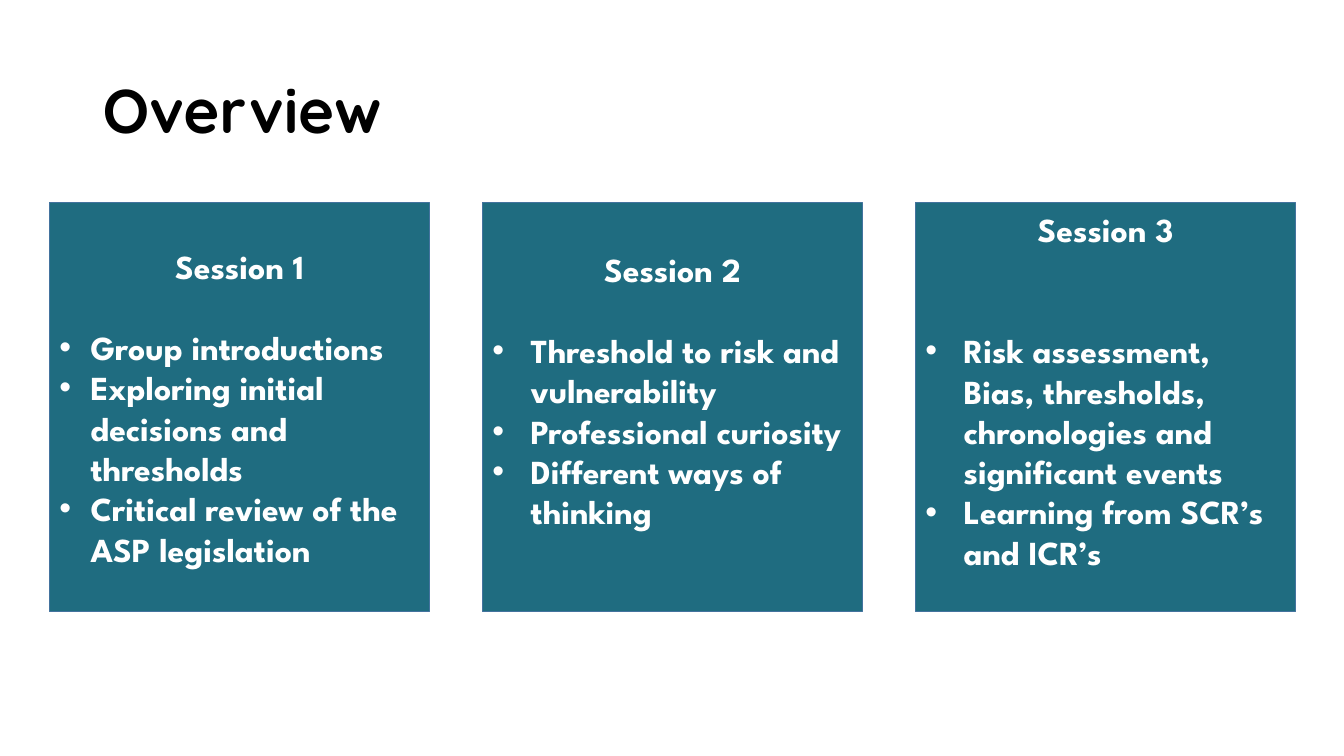
from pptx import Presentation
from pptx.dml.color import RGBColor
from pptx.enum.shapes import MSO_SHAPE as Shape
from pptx.enum.text import MSO_ANCHOR as Anchor, PP_ALIGN as Align
from pptx.util import Inches, Pt
from lxml.etree import SubElement

# Content: heading, top inset (in), lines between heading and list, indent (in), bullets
TITLE = "Overview"
SESSIONS = [
    ("Session 1", 0.43, 1, 0.31, [
        "Group introductions",
        "Exploring initial decisions and thresholds",
        "Critical review of the ASP legislation"]),
    ("Session 2", 0.46, 1, 0.38, [
        "Threshold to risk and vulnerability",
        "Professional curiosity",
        "Different ways of thinking"]),
    ("Session 3", 0.06, 2, 0.38, [
        "Risk assessment, Bias, thresholds, chronologies and significant events",
        "Learning from SCR’s and ICR’s"]),
]

# Grid and style
WIDTH, HEIGHT = 13.33, 7.5
CARD_LEFT, CARD_TOP, CARD_STEP = 0.49, 2.01, 4.295
CARD_WIDTH, CARD_HEIGHT = 3.77, 4.06
LINE_HEIGHT = 29
TEAL, EDGE, WHITE, BLACK = "1F6C80", "43739E", "FFFFFF", "000000"


def color(code):
    return RGBColor.from_string(code)


def write(para, text, font="League Spartan", size=24, ink=WHITE,
          align=Align.LEFT, after=0, spacing=None, indent=None):
    para.alignment = align
    para.space_after = Pt(after)
    if spacing:
        para.line_spacing = spacing
    if indent:
        props = para._p.get_or_add_pPr()
        props.set("marL", str(Inches(indent)))
        props.set("indent", str(-Inches(indent)))
        space = props.nsmap["a"]
        SubElement(props, f"{{{space}}}buFont", typeface="Arial")
        SubElement(props, f"{{{space}}}buChar", char="•")
    span = para.add_run()
    span.text = text
    span.font.name, span.font.size, span.font.bold = font, Pt(size), True
    span.font.color.rgb = color(ink)


deck = Presentation()
deck.slide_width, deck.slide_height = Inches(WIDTH), Inches(HEIGHT)
page = deck.slides.add_slide(deck.slide_layouts[6])

# Title
box = page.shapes.add_textbox(Inches(0.92), Inches(0.4), Inches(11.5), Inches(1.45))
box.text_frame.word_wrap = True
box.text_frame.vertical_anchor = Anchor.MIDDLE
write(box.text_frame.paragraphs[0], TITLE, font="Quicksand", size=44, ink=BLACK, spacing=0.9)

# Session cards
for column, (heading, inset, gap, indent, bullets) in enumerate(SESSIONS):
    card = page.shapes.add_shape(
        Shape.RECTANGLE, Inches(CARD_LEFT + column * CARD_STEP), Inches(CARD_TOP),
        Inches(CARD_WIDTH), Inches(CARD_HEIGHT))
    card.shadow.inherit = False
    card.fill.solid()
    card.fill.fore_color.rgb = color(TEAL)
    card.line.color.rgb = color(EDGE)
    card.line.width = Pt(1)
    frame = card.text_frame
    frame.word_wrap = True
    frame.vertical_anchor = Anchor.TOP
    frame.margin_top = Inches(inset)
    write(frame.paragraphs[0], heading, align=Align.CENTER, after=gap * LINE_HEIGHT)
    for bullet in bullets:
        write(frame.add_paragraph(), bullet, indent=indent)

deck.save("out.pptx")
